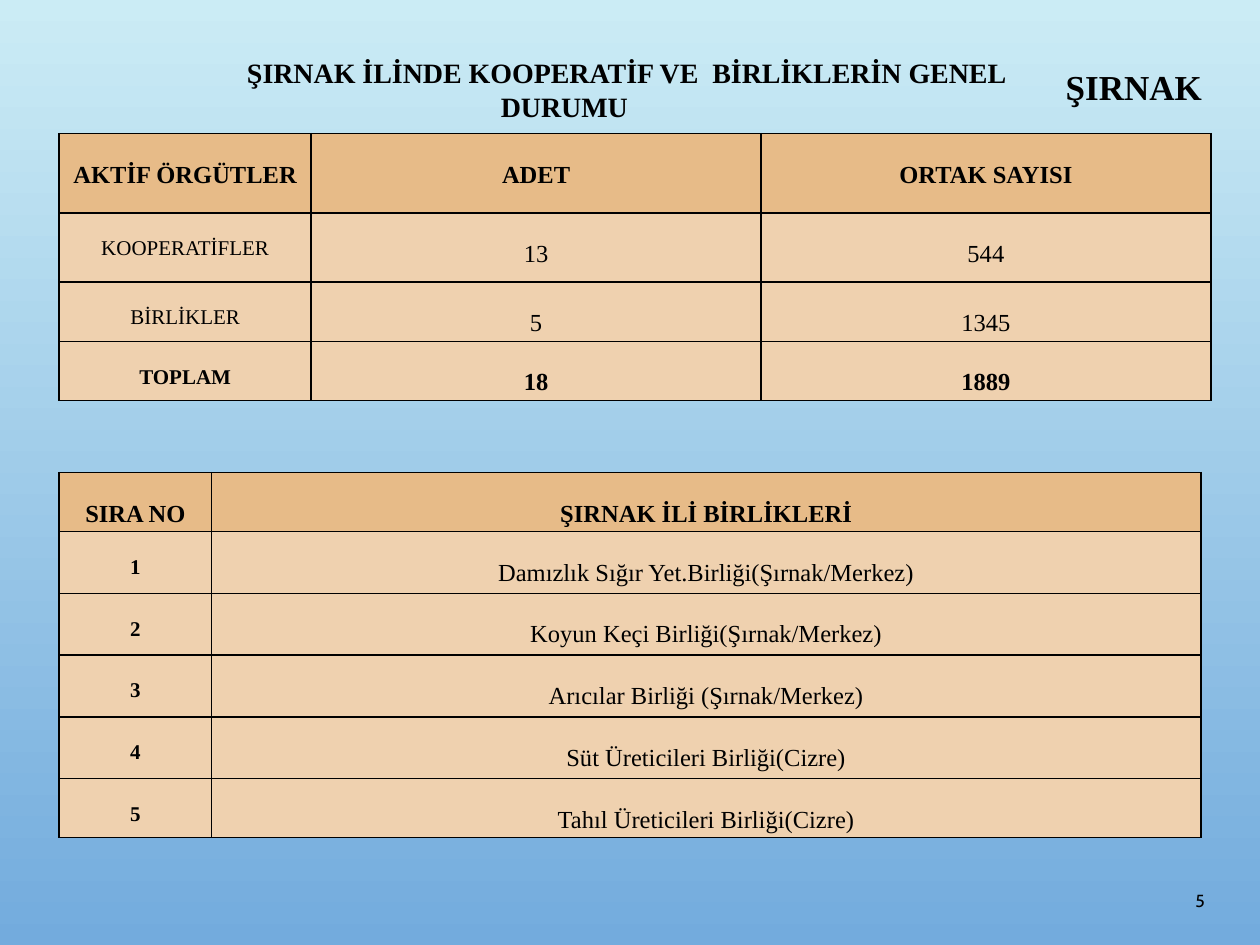
from pptx import Presentation
from pptx.dml.color import RGBColor
from pptx.enum.text import MSO_ANCHOR, MSO_AUTO_SIZE, PP_ALIGN
from pptx.oxml import parse_xml
from pptx.oxml.ns import nsdecls
from pptx.util import Inches, Pt

BLACK = RGBColor(0x00, 0x00, 0x00)
SKY_TOP = RGBColor(0xCB, 0xEC, 0xF5)
SKY_BOTTOM = RGBColor(0x73, 0xAB, 0xDD)
HEADER_FILL = RGBColor(0xE7, 0xBB, 0x88)
BODY_FILL = RGBColor(0xEF, 0xD1, 0xAF)
SERIF = "Times New Roman"

SUMMARY = [
    ("AKTİF ÖRGÜTLER", "ADET", "ORTAK SAYISI"),
    ("KOOPERATİFLER", "13", "544"),
    ("BİRLİKLER", "5", "1345"),
    ("TOPLAM", "18", "1889"),
]
UNIONS = [
    "Damızlık Sığır Yet.Birliği(Şırnak/Merkez)",
    "Koyun Keçi Birliği(Şırnak/Merkez)",
    "Arıcılar Birliği (Şırnak/Merkez)",
    "Süt Üreticileri Birliği(Cizre)",
    "Tahıl Üreticileri Birliği(Cizre)",
]


def style(para, size, bold=False, align=PP_ALIGN.LEFT, name=SERIF):
    para.alignment = align
    font = para.font
    font.name, font.size, font.bold = name, Pt(size), bold
    font.color.rgb = BLACK


def add_borders(cell):
    properties = cell._tc.get_or_add_tcPr()
    for position, side in enumerate(("lnL", "lnR", "lnT", "lnB")):
        properties.insert(position, parse_xml(
            f'<a:{side} {nsdecls("a")} w="{Pt(1)}"><a:solidFill>'
            f'<a:srgbClr val="{BLACK}"/></a:solidFill></a:{side}>'))


def add_grid(page, left, top, widths, heights, rows, is_bold):
    frame = page.shapes.add_table(
        len(heights), len(widths), Inches(left), Inches(top),
        Inches(sum(widths)), Inches(sum(heights)))
    table = frame.table
    table.horz_banding = False
    for column, width in zip(table.columns, widths):
        column.width = Inches(width)
    for r, (height, texts) in enumerate(zip(heights, rows)):
        table.rows[r].height = Inches(height)
        for c, text in enumerate(texts):
            cell = table.cell(r, c)
            size = 12 if r > 0 and c == 0 else 14
            cell.text = text
            cell.margin_left = cell.margin_right = Inches(0.07)
            cell.margin_top = Inches(0.19 if size == 12 else 0.22)
            cell.margin_bottom = 0
            cell.fill.solid()
            cell.fill.fore_color.rgb = HEADER_FILL if r == 0 else BODY_FILL
            add_borders(cell)
            style(cell.text_frame.paragraphs[0], size, is_bold(r, c),
                  PP_ALIGN.CENTER)


def place_title(page, left, top, width, height):
    title = page.shapes.title
    title.left, title.top = Inches(left), Inches(top)
    title.width, title.height = Inches(width), Inches(height)
    frame = title.text_frame
    frame.text = "ŞIRNAK İLİNDE KOOPERATİF VE  BİRLİKLERİN GENEL DURUMU\t"
    frame.word_wrap = True
    frame.auto_size = MSO_AUTO_SIZE.SHAPE_TO_FIT_TEXT
    frame.vertical_anchor = MSO_ANCHOR.MIDDLE
    para = frame.paragraphs[0]
    properties = para._p.get_or_add_pPr()
    properties.set("marL", "0")
    properties.set("indent", str(Inches(0.49)))
    properties.append(parse_xml(
        f'<a:tabLst {nsdecls("a")}><a:tab pos="{Inches(1.84)}" algn="l"/></a:tabLst>'))
    style(para, 16, True, PP_ALIGN.CENTER)


def add_label(page, left, top, width, height, text, anchor, wrap, **look):
    box = page.shapes.add_textbox(
        Inches(left), Inches(top), Inches(width), Inches(height))
    frame = box.text_frame
    frame.text = text
    frame.word_wrap = wrap
    frame.vertical_anchor = anchor
    style(frame.paragraphs[0], **look)


def paint_background(page):
    fill = page.background.fill
    fill.gradient()
    fill.gradient_angle = 270
    for stop, color in zip(fill.gradient_stops, (SKY_TOP, SKY_BOTTOM)):
        stop.color.rgb = color


def main():
    deck = Presentation()
    deck.slide_width, deck.slide_height = Inches(10), Inches(7.5)
    page = deck.slides.add_slide(deck.slide_layouts[5])
    paint_background(page)
    place_title(page, 0.86, 0.39, 7.73, 0.64)
    add_label(page, 8.36, 0.47, 1.29, 0.44, "ŞIRNAK", MSO_ANCHOR.TOP, False,
              size=20, bold=True)
    add_grid(page, 0.47, 1.06, [2, 3.57, 3.57], [0.63, 0.55, 0.47, 0.47],
             SUMMARY, lambda r, c: r in (0, len(SUMMARY) - 1))
    union_rows = [("SIRA NO", "ŞIRNAK İLİ BİRLİKLERİ")]
    union_rows += [(str(n), union) for n, union in enumerate(UNIONS, 1)]
    add_grid(page, 0.47, 3.75, [1.21, 7.85], [0.47] + [0.49] * 4 + [0.47],
             union_rows, lambda r, c: r == 0 or c == 0)
    add_label(page, 8.94, 6.9, 0.72, 0.5, "5", MSO_ANCHOR.MIDDLE, True,
              size=10, align=PP_ALIGN.RIGHT, name="Cabin")
    deck.save("out.pptx")


if __name__ == "__main__":
    main()
